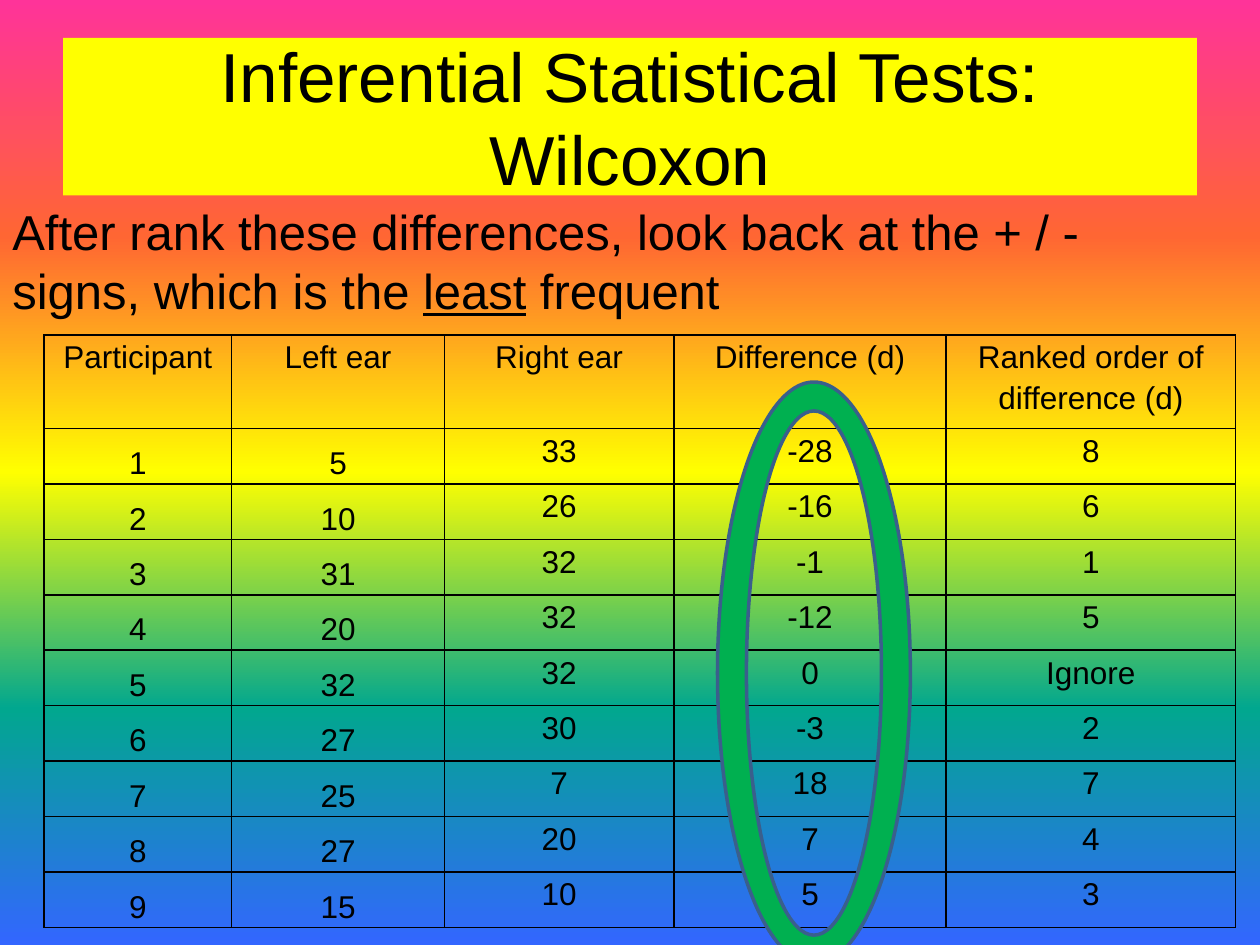
import pptx
import pptx.dml.color
import pptx.enum.shapes
import pptx.enum.text
import pptx.oxml
import pptx.oxml.ns
import pptx.util
from lxml import etree

Pt = pptx.util.Pt
RGBColor = pptx.dml.color.RGBColor
PP_ALIGN = pptx.enum.text.PP_ALIGN
qn = pptx.oxml.ns.qn

BLACK = RGBColor(0x00, 0x00, 0x00)
YELLOW = RGBColor(0xFF, 0xFF, 0x00)
GREEN = RGBColor(0x00, 0xB0, 0x50)
STEEL = RGBColor(0x3A, 0x5F, 0x8C)
RAINBOW = [
    RGBColor(0xFF, 0x33, 0x99),
    RGBColor(0xFF, 0x66, 0x33),
    YELLOW,
    RGBColor(0x01, 0xA7, 0x8F),
    RGBColor(0x33, 0x66, 0xFF),
]
FONT = "Arial"

HEADINGS = ["Participant", "Left ear", "Right ear", "Difference (d)",
            "Ranked order of difference (d)"]
SCORES = [
    (5, 33, -28, 8),
    (10, 26, -16, 6),
    (31, 32, -1, 1),
    (20, 32, -12, 5),
    (32, 32, 0, "Ignore"),
    (27, 30, -3, 2),
    (25, 7, 18, 7),
    (27, 20, 7, 4),
    (15, 10, 5, 3),
]
COLUMN_WIDTHS = [107.2, 121.6, 131.1, 155.7, 165.3]
HEADING_HEIGHT = 53.3
SCORE_HEIGHT = 31.7


def add_run(paragraph, text, size, underline=None):
    run = paragraph.add_run()
    run.text = text
    run.font.name = FONT
    run.font.size = Pt(size)
    run.font.color.rgb = BLACK
    run.font.underline = underline


def paint_background(slide):
    fill = slide.background.fill
    fill.gradient()
    fill.gradient_angle = 270
    stops = slide.element.find(".//" + qn("a:gsLst"))
    for stop in list(stops):
        stops.remove(stop)
    for index, color in enumerate(RAINBOW):
        stop = etree.SubElement(stops, qn("a:gs"), pos=str(index * 25000))
        etree.SubElement(stop, qn("a:srgbClr"), val=str(color))


def set_title(slide, text):
    title = slide.shapes.title
    title.left, title.top, title.width, title.height = Pt(36), Pt(21.6), Pt(648), Pt(90)
    title.fill.solid()
    title.fill.fore_color.rgb = YELLOW
    frame = title.text_frame
    frame.auto_size = pptx.enum.text.MSO_AUTO_SIZE.NONE
    frame.vertical_anchor = pptx.enum.text.MSO_ANCHOR.MIDDLE
    paragraph = frame.paragraphs[0]
    paragraph.alignment = PP_ALIGN.CENTER
    add_run(paragraph, text, 39.6)


def add_instruction(slide):
    instruction = slide.shapes.add_textbox(Pt(0), Pt(111.6), Pt(690.5), Pt(75))
    frame = instruction.text_frame
    frame.word_wrap = True
    paragraph = frame.paragraphs[0]
    add_run(paragraph, "After rank these differences, look back at the + / - signs, which is the ", 28)
    add_run(paragraph, "least", 28, True)
    add_run(paragraph, " frequent", 28)


def add_borders(cell):
    properties = cell._tc.get_or_add_tcPr()
    for side in ("a:lnL", "a:lnR", "a:lnT", "a:lnB"):
        border = etree.SubElement(properties, qn(side), w=str(Pt(1)))
        fill = etree.SubElement(border, qn("a:solidFill"))
        etree.SubElement(fill, qn("a:srgbClr"), val=str(BLACK))


def fill_cell(cell, text, line_spacing):
    add_borders(cell)
    cell.fill.background()
    cell.margin_left = cell.margin_right = Pt(5)
    cell.margin_top = cell.margin_bottom = Pt(0)
    paragraph = cell.text_frame.paragraphs[0]
    paragraph.alignment = PP_ALIGN.CENTER
    paragraph.line_spacing = line_spacing
    add_run(paragraph, text, 18)


def add_score_table(slide):
    rows = [HEADINGS] + [(number, *scores) for number, scores in enumerate(SCORES, 1)]
    heights = [HEADING_HEIGHT] + [SCORE_HEIGHT] * len(SCORES)
    table = slide.shapes.add_table(
        len(rows), len(HEADINGS), Pt(25.2), Pt(191.5),
        Pt(sum(COLUMN_WIDTHS)), Pt(sum(heights))).table
    table.first_row = False
    table.horz_banding = False
    for column, width in zip(table.columns, COLUMN_WIDTHS):
        column.width = Pt(width)
    for row_index, (values, height) in enumerate(zip(rows, heights)):
        table.rows[row_index].height = Pt(height)
        for column_index, value in enumerate(values):
            line_spacing = 1.5 if row_index > 0 and column_index < 2 else 1.15
            fill_cell(table.cell(row_index, column_index), str(value), line_spacing)


def add_difference_ring(slide):
    ring = slide.shapes.add_shape(
        pptx.enum.shapes.MSO_SHAPE.DONUT, Pt(298.8), Pt(329.5), Pt(332.6), Pt(110.2))
    ring.rotation = 90
    ring.adjustments[0] = 0.15
    ring.shadow.inherit = False
    ring.fill.solid()
    ring.fill.fore_color.rgb = GREEN
    ring.line.color.rgb = STEEL
    ring.line.width = Pt(2)


def main():
    presentation = pptx.Presentation()
    presentation.slide_width = Pt(720)
    presentation.slide_height = Pt(540)
    slide = presentation.slides.add_slide(presentation.slide_layouts[5])
    paint_background(slide)
    set_title(slide, "Inferential Statistical Tests: Wilcoxon")
    add_score_table(slide)
    add_instruction(slide)
    add_difference_ring(slide)
    presentation.save("out.pptx")


if __name__ == "__main__":
    main()
